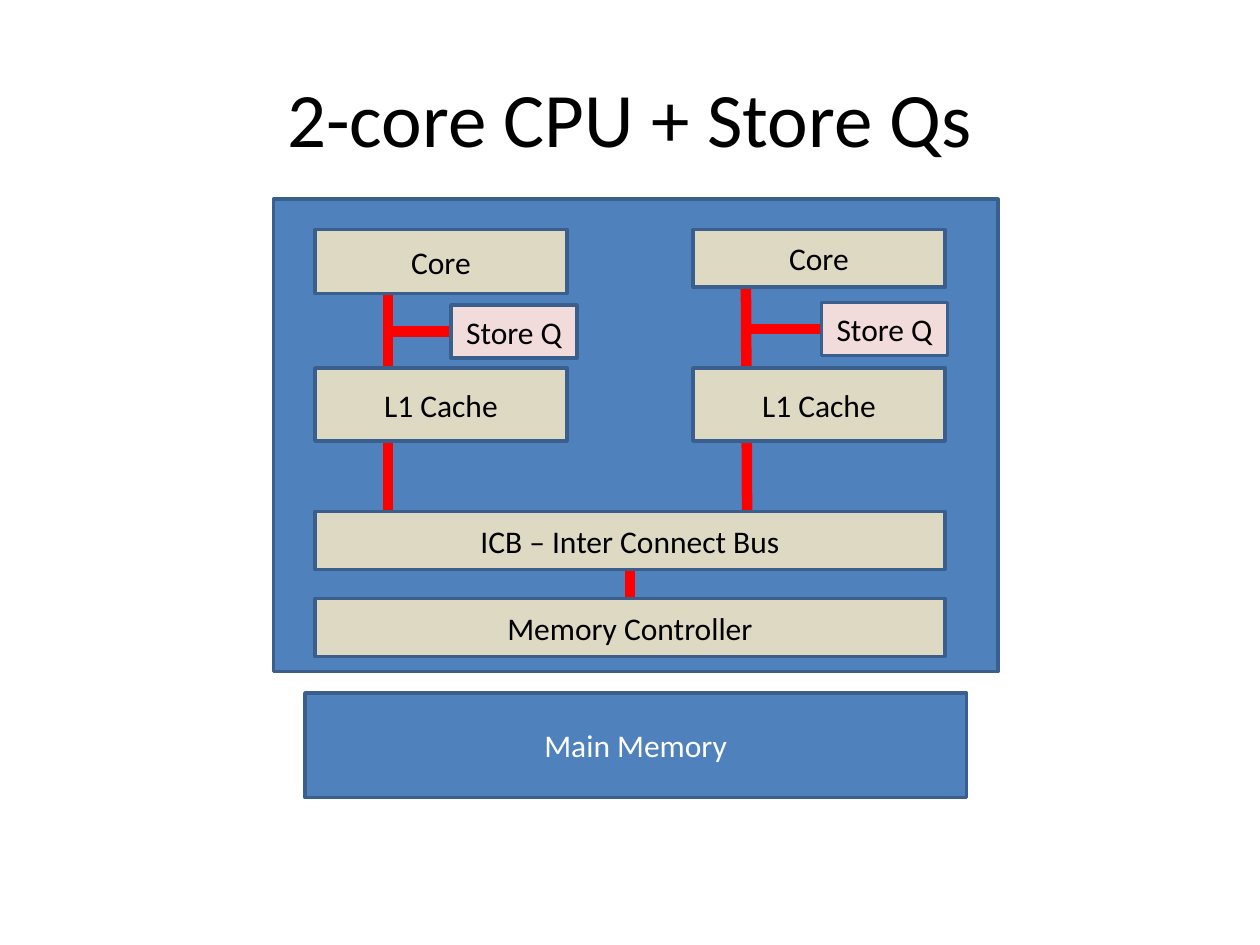
from pptx import Presentation
from pptx.dml.color import RGBColor
from pptx.enum.shapes import MSO_CONNECTOR, MSO_SHAPE
from pptx.enum.text import MSO_ANCHOR, PP_ALIGN
from pptx.oxml.ns import qn
from pptx.util import Inches, Pt
from lxml.etree import SubElement

COLORS = {"blue": "4F81BD", "border": "3A5F8C", "tan": "DDD9C3", "pink": "F2DCDB",
          "wire": "FF0000", "black": "000000", "white": "FFFFFF"}

deck = Presentation()
deck.slide_width, deck.slide_height = Inches(10), Inches(7.5)
page = deck.slides.add_slide(deck.slide_layouts[6])


def add_box(text, left, top, width, height, fill=None, color="black", size=18):
    """Add centred text in a bordered rectangle, or in a plain text box without a fill."""
    area = [Inches(value) for value in (left, top, width, height)]
    if fill:
        box = page.shapes.add_shape(MSO_SHAPE.RECTANGLE, *area)
        box.shadow.inherit = False
        box.fill.solid()
        box.fill.fore_color.rgb = RGBColor.from_string(COLORS[fill])
        box.line.color.rgb = RGBColor.from_string(COLORS["border"])
        box.line.width = Pt(2)
    else:
        box = page.shapes.add_textbox(*area)
    frame = box.text_frame
    frame.word_wrap = True
    frame.vertical_anchor = MSO_ANCHOR.MIDDLE
    if text:
        para = frame.paragraphs[0]
        para.alignment = PP_ALIGN.CENTER
        span = para.add_run()
        span.text = text
        span.font.name = "Calibri"
        span.font.size = Pt(size)
        span.font.color.rgb = RGBColor.from_string(COLORS[color])
    return box


def add_wire(x1, y1, x2, y2):
    wire = page.shapes.add_connector(
        MSO_CONNECTOR.STRAIGHT, Inches(x1), Inches(y1), Inches(x2), Inches(y2))
    wire.line.color.rgb = RGBColor.from_string(COLORS["wire"])
    wire.line.width = Pt(6)
    SubElement(wire._element.spPr, qn("a:effectLst"))
    return wire


add_box("2-core CPU + Store Qs", 0.5, 0.3, 9, 1.25, size=44)
add_box("", 2.17, 1.58, 5.75, 3.75, fill="blue")

# Each core: left edge, core height, wire x at bottom and top, store queue left and top
cores = [(2.5, 0.51, 3.08, 3.08, 3.58, 2.42),
         (5.5, 0.46, 5.93, 5.92, 6.52, 2.4)]
for left, core_height, wire_bottom, wire_top, queue_left, queue_top in cores:
    add_wire(wire_bottom, 4.19, wire_top, 2.2)
    add_box("Core", left, 1.82, 2, core_height, fill="tan")
    add_box("L1 Cache", left, 2.92, 2, 0.58, fill="tan")
    queue_middle = queue_top + 0.21
    queue_wire = add_wire(wire_bottom, queue_middle, queue_left, queue_middle)
    queue = add_box("Store Q", queue_left, queue_top, 1, 0.42, fill="pink")
    queue_wire.end_connect(queue, 1)

# Wires are drawn before the boxes they join, so the borders stay on top
bus_wire = add_wire(5, 4.52, 5, 4.75)
bus = add_box("ICB – Inter Connect Bus", 2.5, 4.06, 5, 0.46, fill="tan")
controller = add_box("Memory Controller", 2.5, 4.75, 5, 0.46, fill="tan")
bus_wire.begin_connect(bus, 2)
bus_wire.end_connect(controller, 0)

add_box("Main Memory", 2.42, 5.5, 5.25, 0.83, fill="blue", color="white")

deck.save("out.pptx")
